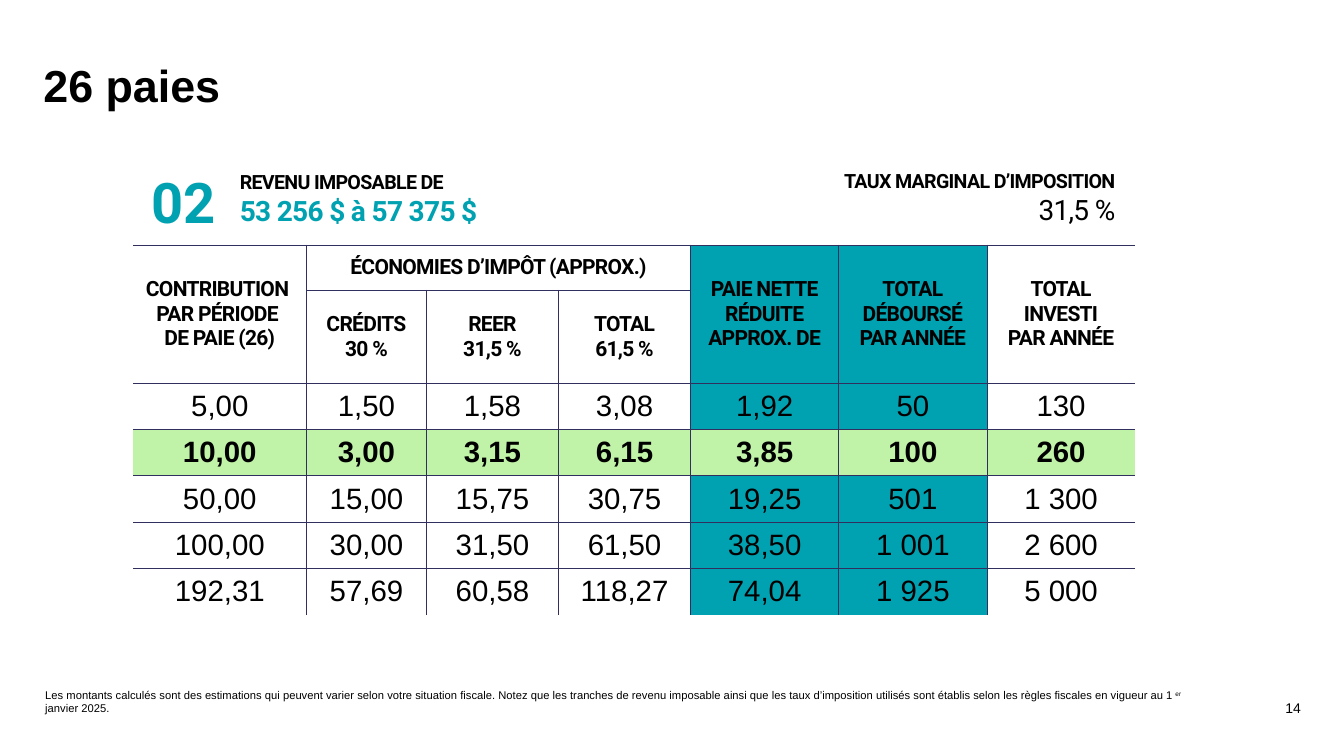
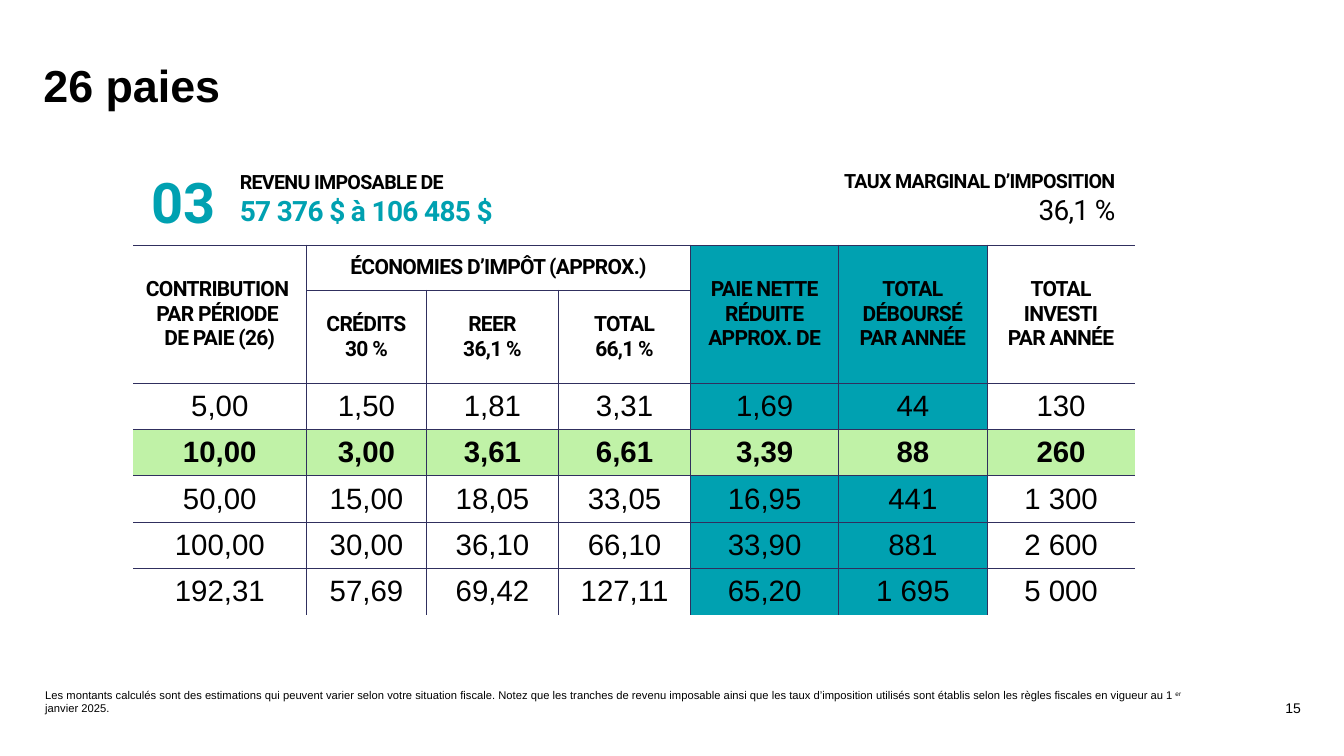
from collections import namedtuple

from lxml import etree
from pptx import Presentation
from pptx import util as u
from pptx.dml.color import RGBColor
from pptx.enum import text as t
from pptx.oxml import ns

PX = 9144  # 100 px to the inch

BLACK = RGBColor(0x00, 0x00, 0x00)
TEAL = RGBColor(0x00, 0xA1, 0xB1)
GREEN = RGBColor(0xC0, 0xF2, 0xA7)
NAVY = RGBColor(0x30, 0x2F, 0x5E)

Look = namedtuple("Look", "size face hue bold space")
TITLE = Look(32, "Arial", BLACK, True, 0)
LABEL = Look(14, "Roboto", BLACK, True, -50)
RANGE = Look(20, "Roboto", TEAL, True, -50)
RATE = Look(20, "Roboto", BLACK, False, -50)
RANK = Look(40, "Roboto", TEAL, True, 0)
HEAD = Look(15, "Roboto", BLACK, True, -50)
BODY = Look(21, "Arial", BLACK, False, 0)
STRONG = BODY._replace(bold=True)
PAGE = Look(10, "Arial", BLACK, False, 0)
NOTE = Look(8, "Arial", BLACK, False, 0)

LEFT, MID, RIGHT = t.PP_ALIGN.LEFT, t.PP_ALIGN.CENTER, t.PP_ALIGN.RIGHT

NO_STYLE = "{2D5ABB26-0587-4C30-8999-92F81FD0307C}"
WIDTHS = [172, 119, 131, 131, 147, 147, 147]
HEIGHTS = [45, 92] + [46] * 5
TINTS = {4: 25, 5: 50}  # column: opacity in percent
SPLIT = (1, 2, 3)  # columns under the shared heading
BEST = 3  # highlighted row

TOP = ["CONTRIBUTION \nPAR PÉRIODE \nDE PAIE (26)", "ÉCONOMIES D’IMPÔT (APPROX.)",
       "", "", "PAIE NETTE\nRÉDUITE\nAPPROX. DE",
       "TOTAL\nDÉBOURSÉ\nPAR ANNÉE", "TOTAL\nINVESTI\nPAR ANNÉE"]
PAID = ["5,00", "10,00", "50,00", "100,00", "192,31"]
CREDIT = ["1,50", "3,00", "15,00", "30,00", "57,69"]
SAVED = ["130", "260", "1 300", "2 600", "5 000"]
FOOT = ("Les montants calculés sont des estimations qui peuvent varier selon votre "
        "situation fiscale. Notez que les tranches de revenu imposable ainsi que les "
        "taux d’imposition utilisés sont établis selon les règles fiscales en "
        "vigueur au 1", "er", " janvier 2025.")

Case = namedtuple("Case", "rank page span rate total reer sum net cost")
CASES = [
    Case("02", "14", "53 256 $ à 57 375 $", "31,5 %", "61,5 %",
         ["1,58", "3,15", "15,75", "31,50", "60,58"],
         ["3,08", "6,15", "30,75", "61,50", "118,27"],
         ["1,92", "3,85", "19,25", "38,50", "74,04"],
         ["50", "100", "501", "1 001", "1 925"]),
    Case("03", "15", "57 376 $ à 106 485 $", "36,1 %", "66,1 %",
         ["1,81", "3,61", "18,05", "36,10", "69,42"],
         ["3,31", "6,61", "33,05", "66,10", "127,11"],
         ["1,69", "3,39", "16,95", "33,90", "65,20"],
         ["44", "88", "441", "881", "1 695"]),
]


def dress(run, look):
    font = run.font
    font.size, font.name, font.bold = u.Pt(look.size), look.face, look.bold
    font.color.rgb = look.hue
    if look.space:
        run._r.get_or_add_rPr().set("spc", str(look.space))


def write(frame, words, looks, align=LEFT):
    """Fill a frame; each line takes its look, and the last look goes on."""
    frame.text = words
    for i, para in enumerate(frame.paragraphs):
        para.alignment = align
        for run in para.runs:
            dress(run, looks[min(i, len(looks) - 1)])


def box(slide, area, words, looks, align=LEFT):
    shape = slide.shapes.add_textbox(*(n * PX for n in area))
    frame = shape.text_frame
    frame.word_wrap = True
    write(frame, words, looks, align)
    return frame


def title(slide, words):
    shape = slide.shapes.title
    shape.left, shape.top, shape.width, shape.height = (
        n * PX for n in (33, 50, 1146, 88))
    frame = shape.text_frame
    frame.auto_size = t.MSO_AUTO_SIZE.NONE
    frame.vertical_anchor = t.MSO_ANCHOR.TOP
    write(frame, words, [TITLE])
    frame.paragraphs[0].line_spacing = u.Pt(40)


def wall(row, col):
    """Is there a line on the left of this cell?"""
    return 0 < col < len(WIDTHS) and not (row == 0 and col in SPLIT[1:])


def floor(row, col):
    """Is there a line on top of this cell?"""
    return row < len(HEIGHTS) and (row != 1 or col in SPLIT)


def border(cell, row, col):
    sides = {"L": wall(row, col), "R": wall(row, col + 1),
             "T": floor(row, col), "B": floor(row + 1, col)}
    props = cell._tc.get_or_add_tcPr()
    for side, drawn in sides.items():
        line = etree.SubElement(props, ns.qn("a:ln" + side), w=str(u.Pt(0.6)))
        if drawn:
            fill = etree.SubElement(line, ns.qn("a:solidFill"))
            etree.SubElement(fill, ns.qn("a:srgbClr"), val=str(NAVY))
        else:
            etree.SubElement(line, ns.qn("a:noFill"))


def paint(cell, row, col):
    fill = cell.fill
    if row != BEST and col not in TINTS:
        fill.background()
        return
    fill.solid()
    fill.fore_color.rgb = GREEN if row == BEST else TEAL
    if row != BEST:
        tint = cell._tc.tcPr.find(".//" + ns.qn("a:srgbClr"))
        etree.SubElement(tint, ns.qn("a:alpha"), val=str(TINTS[col] * 1000))


def grid(slide, rows):
    area = (132, 243, sum(WIDTHS), sum(HEIGHTS))
    frame = slide.shapes.add_table(len(HEIGHTS), len(WIDTHS), *(n * PX for n in area))
    table = frame.table
    table.first_row = table.horz_banding = False
    table._tbl.tblPr.find(ns.qn("a:tableStyleId")).text = NO_STYLE
    for col, width in zip(table.columns, WIDTHS):
        col.width = width * PX
    for row, height in zip(table.rows, HEIGHTS):
        row.height = height * PX
    for r, row in enumerate(rows):
        look = HEAD if r < 2 else STRONG if r == BEST else BODY
        for c, words in enumerate(row):
            cell = table.cell(r, c)
            border(cell, r, c)
            paint(cell, r, c)
            cell.vertical_anchor = t.MSO_ANCHOR.MIDDLE
            if r and c in SPLIT:
                cell.margin_left = cell.margin_right = 0
                cell.margin_top = cell.margin_bottom = 0
            write(cell.text_frame, words, [look], MID)
    table.cell(0, SPLIT[0]).merge(table.cell(0, SPLIT[-1]))
    for c in range(len(WIDTHS)):
        if c not in SPLIT:
            table.cell(0, c).merge(table.cell(1, c))


def footer(slide, page):
    frame = box(slide, (1000, 682, 300, 40), page, [PAGE], RIGHT)
    frame.vertical_anchor = t.MSO_ANCHOR.MIDDLE
    para = box(slide, (35, 678, 1168, 37), "", [NOTE]).paragraphs[0]
    for words in FOOT:
        run = para.add_run()
        run.text = words
        dress(run, NOTE)
    para.runs[1]._r.get_or_add_rPr().set("baseline", "30000")


def build(deck, case):
    slide = deck.slides.add_slide(deck.slide_layouts[5])
    title(slide, "26 paies")
    box(slide, (228, 164, 327, 67), "REVENU IMPOSABLE DE\n" + case.span, [LABEL, RANGE])
    box(slide, (751, 163, 365, 67), "TAUX MARGINAL D’IMPOSITION\n" + case.rate,
        [LABEL, RATE], RIGHT)
    sub = ["", "CRÉDITS\n30 %", "REER\n" + case.rate, "TOTAL\n" + case.total, "", "", ""]
    data = zip(PAID, CREDIT, case.reer, case.sum, case.net, case.cost, SAVED)
    grid(slide, [TOP, sub, *data])
    rank = box(slide, (140, 172, 97, 88), case.rank, [RANK])
    rank.paragraphs[0].line_spacing = u.Pt(40)
    footer(slide, case.page)


def main():
    deck = Presentation()
    deck.slide_width, deck.slide_height = 1333 * PX, 750 * PX
    for case in CASES:
        build(deck, case)
    deck.save("out.pptx")


if __name__ == "__main__":
    main()
